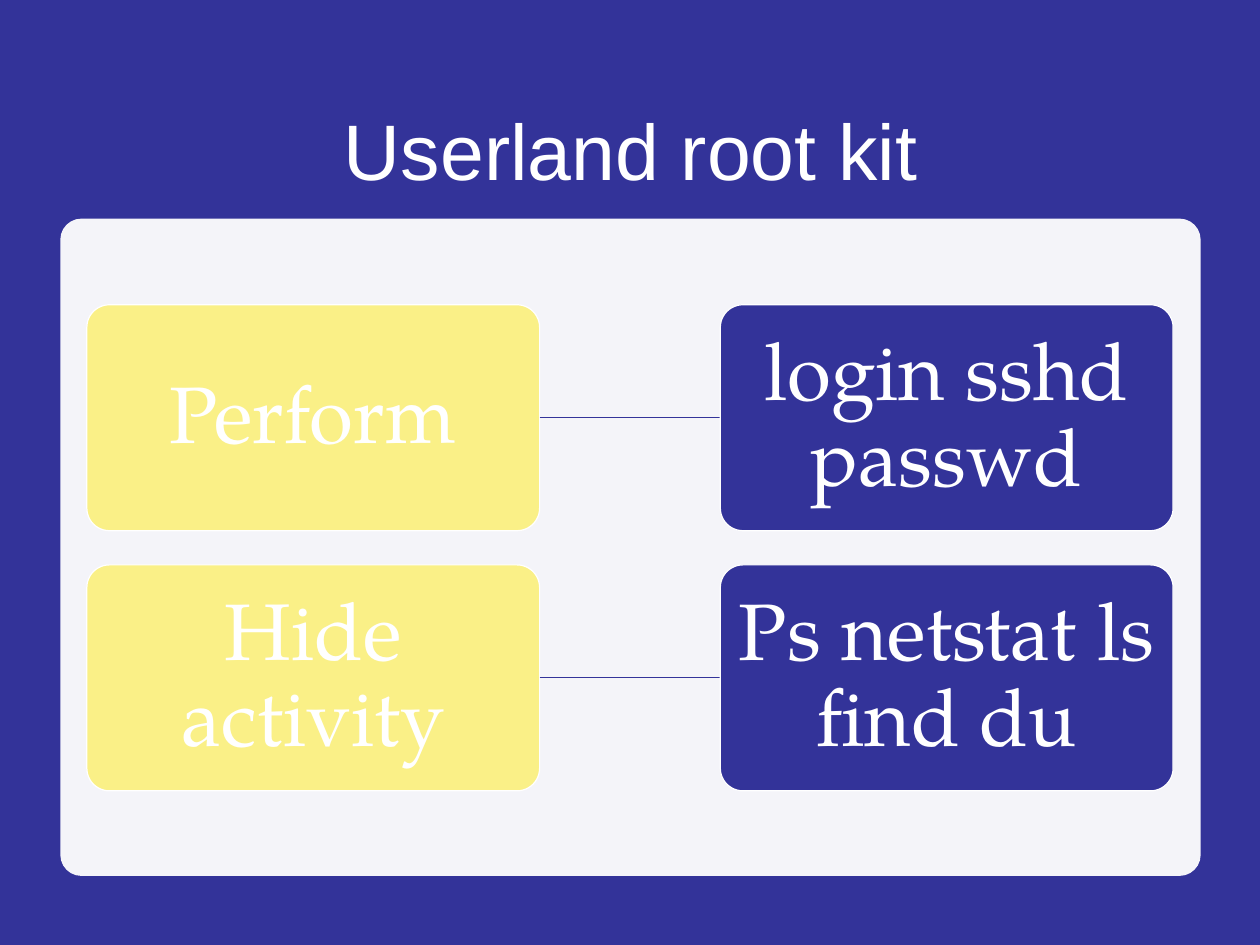
from lxml import etree
from pptx import Presentation
from pptx.dml.color import RGBColor
from pptx.enum.shapes import MSO_CONNECTOR, MSO_SHAPE
from pptx.enum.text import MSO_ANCHOR, PP_ALIGN
from pptx.oxml.ns import qn
from pptx.util import Cm, Pt

ROUNDED = MSO_SHAPE.ROUNDED_RECTANGLE
STRAIGHT = MSO_CONNECTOR.STRAIGHT
MIDDLE, BOTTOM = MSO_ANCHOR.MIDDLE, MSO_ANCHOR.BOTTOM
CENTER = PP_ALIGN.CENTER


def rgb(value):
    return RGBColor.from_string(value)


class Deck:
    NAVY, YELLOW, WHITE = "333399", "FAF087", "FFFFFF"
    TITLE_FONT, BODY_FONT = "Arial", "TeX Gyre Pagella"

    def __init__(self, slide):
        self.s = slide

    def background(self, color):
        fill = self.s.background.fill
        fill.solid()
        fill.fore_color.rgb = rgb(color)

    def set_text(self, sp, text, font, size, anchor, inset, spacing=1.0):
        tf = sp.text_frame
        tf.text = text
        tf.word_wrap = True
        tf.vertical_anchor = anchor
        tf.margin_left = tf.margin_right = Cm(inset)
        tf.margin_top = tf.margin_bottom = Cm(inset)
        p = tf.paragraphs[0]
        p.alignment = CENTER
        p.line_spacing = spacing
        r = p.runs[0]
        r.font.name = font
        r.font.size = Pt(size)
        r.font.color.rgb = rgb(self.WHITE)

    def title(self, text, x, y, w, h):
        sp = self.s.shapes.add_textbox(Cm(x), Cm(y), Cm(w), Cm(h))
        self.set_text(sp, text, self.TITLE_FONT, 64, BOTTOM, 0.16)

    def rounded(self, x, y, w, h, radius, color):
        sp = self.s.shapes.add_shape(ROUNDED, Cm(x), Cm(y), Cm(w), Cm(h))
        sp.adjustments[0] = radius
        sp.shadow.inherit = False
        sp.fill.solid()
        sp.fill.fore_color.rgb = rgb(color)
        return sp

    def panel(self, x, y, w, h, opacity):
        sp = self.rounded(x, y, w, h, 0.032, self.WHITE)
        sp.line.fill.background()
        clr = sp._element.spPr.find(".//" + qn("a:srgbClr"))
        etree.SubElement(clr, qn("a:alpha")).set("val", str(opacity * 1000))

    def box(self, text, x, y, w, h, color):
        sp = self.rounded(x, y, w, h, 0.1, color)
        sp.line.color.rgb = rgb(self.WHITE)
        sp.line.width = Pt(1)
        self.set_text(sp, text, self.BODY_FONT, 65, MIDDLE, 0.32, 0.9)

    def link(self, x1, x2, y):
        c = self.s.shapes.add_connector(STRAIGHT, Cm(x1), Cm(y), Cm(x2), Cm(y))
        c.line.color.rgb = rgb(self.NAVY)
        c.line.width = Pt(1)
        etree.SubElement(c._element.spPr, qn("a:effectLst"))


def main():
    prs = Presentation()
    prs.slide_width, prs.slide_height = Cm(36.12), Cm(27.1)
    deck = Deck(prs.slides.add_slide(prs.slide_layouts[6]))

    # Background, title and panel
    deck.background(deck.NAVY)
    deck.title("Userland root kit", 2.49, 1.83, 31.17, 3.96)
    deck.panel(1.73, 6.27, 32.69, 18.85, 95)

    # Each purpose is linked to the programs that serve it
    rows = [
        ("Perform", "login sshd passwd"),
        ("Hide activity", "Ps netstat ls find du"),
    ]
    left, right, top = 2.49, 20.65, 8.74
    w, h, pitch = 12.98, 6.48, 7.46
    for i, (purpose, programs) in enumerate(rows):
        y = top + i * pitch
        deck.box(purpose, left, y, w, h, deck.YELLOW)
        deck.link(left + w, right, y + h / 2)
        deck.box(programs, right, y, w, h, deck.NAVY)

    prs.save("out.pptx")


if __name__ == "__main__":
    main()
